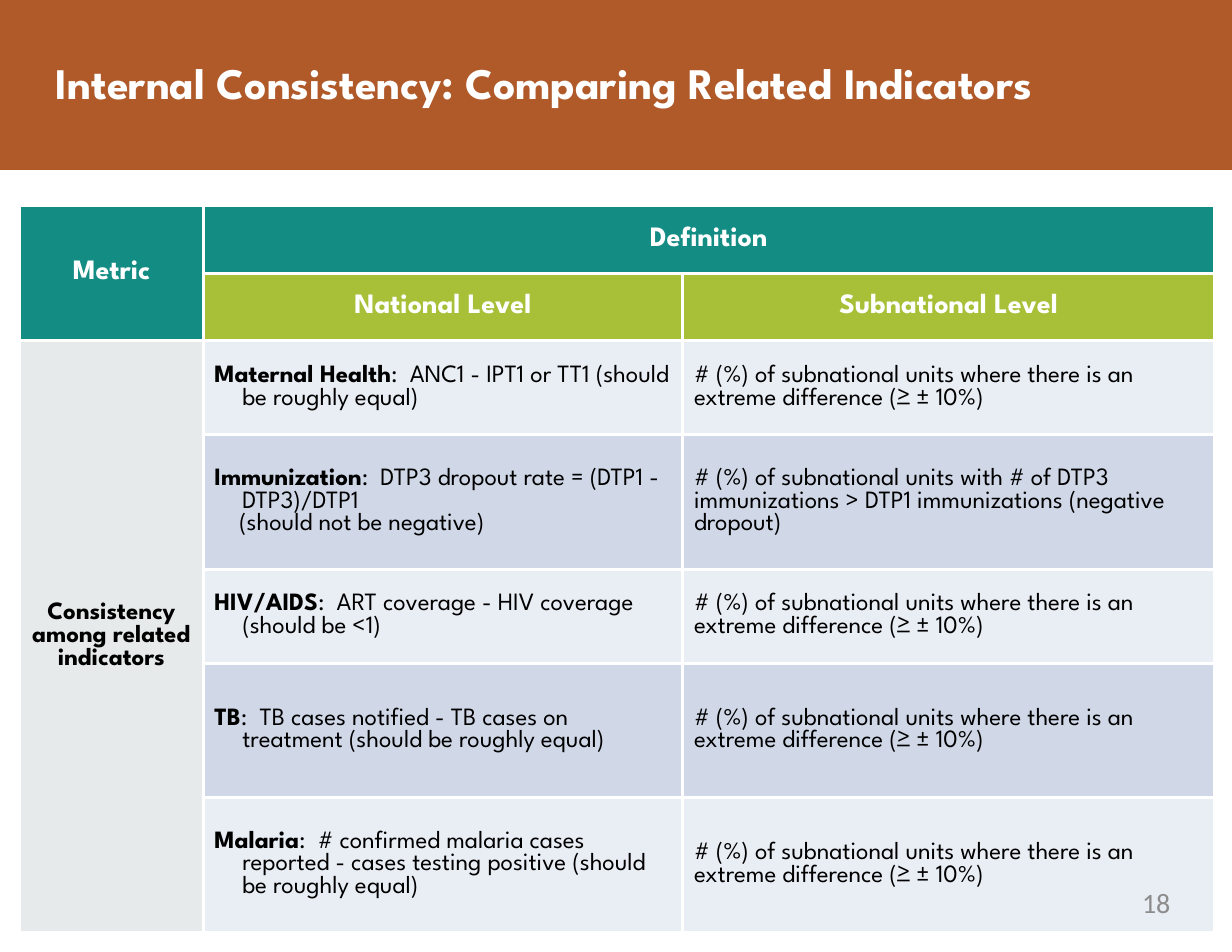
"""Build the slide on internal consistency of related indicators."""
from dataclasses import dataclass

import lxml.etree
import pptx
import pptx.dml.color
import pptx.enum.shapes
import pptx.enum.text
import pptx.oxml
import pptx.oxml.ns
import pptx.util

Pt = pptx.util.Pt
ALIGN = pptx.enum.text.PP_ALIGN
MIDDLE = pptx.enum.text.MSO_ANCHOR.MIDDLE
SPARTAN = "League Spartan"
COLORS = {
    "banner": "B05A2A",
    "header": "138D84",
    "level": "A7C038",
    "metric": "E7EAEA",
    "light": "E9EDF4",
    "dark": "D0D8E8",
    "white": "FFFFFF",
    "black": "000000",
    "number": "8C8C8C",
}
COLUMN_WIDTHS = (118, 308.4, 341.8)
ROW_HEIGHTS = (43.6, 43.6, 60.4, 86.4, 60.4, 86.4, 86.4)
BORDER_WIDTH = 2.25
HANG = 18
NOTE_INDENT = 16
DIFFERENCE = "# (%) of subnational units where there is an extreme difference (≥ ± 10%)"


@dataclass(frozen=True)
class Indicator:
    name: str
    national: str
    subnational: str = DIFFERENCE
    note: str = ""


@dataclass(frozen=True)
class Heading:
    row: int
    col: int
    last_row: int
    last_col: int
    text: str
    fill: str
    color: str = "white"
    size: float = 18


INDICATORS = (
    Indicator("Maternal Health", ":  ANC1 - IPT1 or TT1 (should be roughly equal)"),
    Indicator(
        "Immunization",
        ":  DTP3 dropout rate = (DTP1 - DTP3)/DTP1",
        "# (%) of subnational units with # of DTP3 immunizations > DTP1 immunizations (negative dropout)",
        "(should not be negative)",
    ),
    Indicator("HIV/AIDS", ":  ART coverage - HIV coverage (should be <1)"),
    Indicator("TB", ":  TB cases notified - TB cases on treatment (should be roughly equal)"),
    Indicator(
        "Malaria",
        ":  # confirmed malaria cases reported - cases testing positive (should be roughly equal)",
    ),
)
HEADINGS = (
    Heading(0, 0, 1, 0, "Metric", "header"),
    Heading(0, 1, 0, 2, "Definition", "header"),
    Heading(1, 1, 1, 1, "National Level", "level"),
    Heading(1, 2, 1, 2, "Subnational Level", "level"),
    Heading(2, 0, 6, 0, "Consistency among related indicators", "metric", "black", 16),
)


def rgb(name: str) -> pptx.dml.color.RGBColor:
    return pptx.dml.color.RGBColor.from_string(COLORS[name])


def add_run(p, text: str, size: float = 16, color: str = "black",
            bold: bool = False, font: str = SPARTAN) -> None:
    r = p.add_run()
    r.text = text
    r.font.name = font
    r.font.size = Pt(size)
    r.font.bold = bold
    r.font.color.rgb = rgb(color)


def set_indent(p, left: float, first: float) -> None:
    props = p._p.get_or_add_pPr()
    props.set("marL", str(Pt(left)))
    props.set("indent", str(Pt(first)))


def add_text(s, left: float, top: float, width: float, height: float):
    tf = s.shapes.add_textbox(Pt(left), Pt(top), Pt(width), Pt(height)).text_frame
    tf.word_wrap = True
    tf.margin_left = tf.margin_right = tf.margin_top = tf.margin_bottom = 0
    return tf.paragraphs[0]


def style_cell(cell, fill: str) -> None:
    cell.vertical_anchor = MIDDLE
    cell.fill.solid()
    cell.fill.fore_color.rgb = rgb(fill)
    props = cell._tc.get_or_add_tcPr()
    for i, side in enumerate("LRTB"):
        ln = pptx.oxml.parse_xml(
            f'<a:ln{side} {pptx.oxml.ns.nsdecls("a")} w="{Pt(BORDER_WIDTH)}">'
            f'<a:solidFill><a:srgbClr val="{COLORS["white"]}"/></a:solidFill></a:ln{side}>'
        )
        props.insert(i, ln)


def add_heading(table, h: Heading) -> None:
    for row in range(h.row, h.last_row + 1):
        for col in range(h.col, h.last_col + 1):
            style_cell(table.cell(row, col), h.fill)
    cell = table.cell(h.row, h.col)
    if (h.row, h.col) != (h.last_row, h.last_col):
        cell.merge(table.cell(h.last_row, h.last_col))
    p = cell.text_frame.paragraphs[0]
    p.alignment = ALIGN.CENTER
    add_run(p, h.text, h.size, h.color, True)


def add_indicator(table, row: int, item: Indicator) -> None:
    national, subnational = table.cell(row, 1), table.cell(row, 2)
    for cell in (national, subnational):
        style_cell(cell, "dark" if row % 2 else "light")
    p = national.text_frame.paragraphs[0]
    set_indent(p, HANG, -HANG)
    add_run(p, item.name, bold=True)
    add_run(p, item.national)
    if item.note:
        p = national.text_frame.add_paragraph()
        set_indent(p, NOTE_INDENT, 0)
        add_run(p, item.note)
    add_run(subnational.text_frame.paragraphs[0], item.subnational)


def add_indicator_table(s) -> None:
    table = s.shapes.add_table(
        len(ROW_HEIGHTS), len(COLUMN_WIDTHS), Pt(12.6), Pt(132),
        Pt(sum(COLUMN_WIDTHS)), Pt(sum(ROW_HEIGHTS)),
    ).table
    for column, width in zip(table.columns, COLUMN_WIDTHS):
        column.width = Pt(width)
    for row, height in zip(table.rows, ROW_HEIGHTS):
        row.height = Pt(height)
    for heading in HEADINGS:
        add_heading(table, heading)
    for row, item in enumerate(INDICATORS, start=2):
        add_indicator(table, row, item)


def main() -> None:
    prs = pptx.Presentation()
    prs.slide_width, prs.slide_height = Pt(792), Pt(612)
    s = prs.slides.add_slide(prs.slide_layouts[6])

    banner = s.shapes.add_shape(
        pptx.enum.shapes.MSO_SHAPE.RECTANGLE, 0, 0, prs.slide_width, Pt(109.2)
    )
    banner.shadow.inherit = False
    banner.fill.solid()
    banner.fill.fore_color.rgb = rgb("banner")
    banner.line.fill.background()

    p = add_text(s, 36, 36, 756, 34)
    add_run(p, "Internal Consistency: Comparing Related Indicators", 28, "white", True)

    add_indicator_table(s)

    p = add_text(s, 570, 569.5, 182.4, 30)
    p.alignment = ALIGN.RIGHT
    add_run(p, "18", 18, "number", font="Calibri")

    prs.save("out.pptx")


if __name__ == "__main__":
    main()
